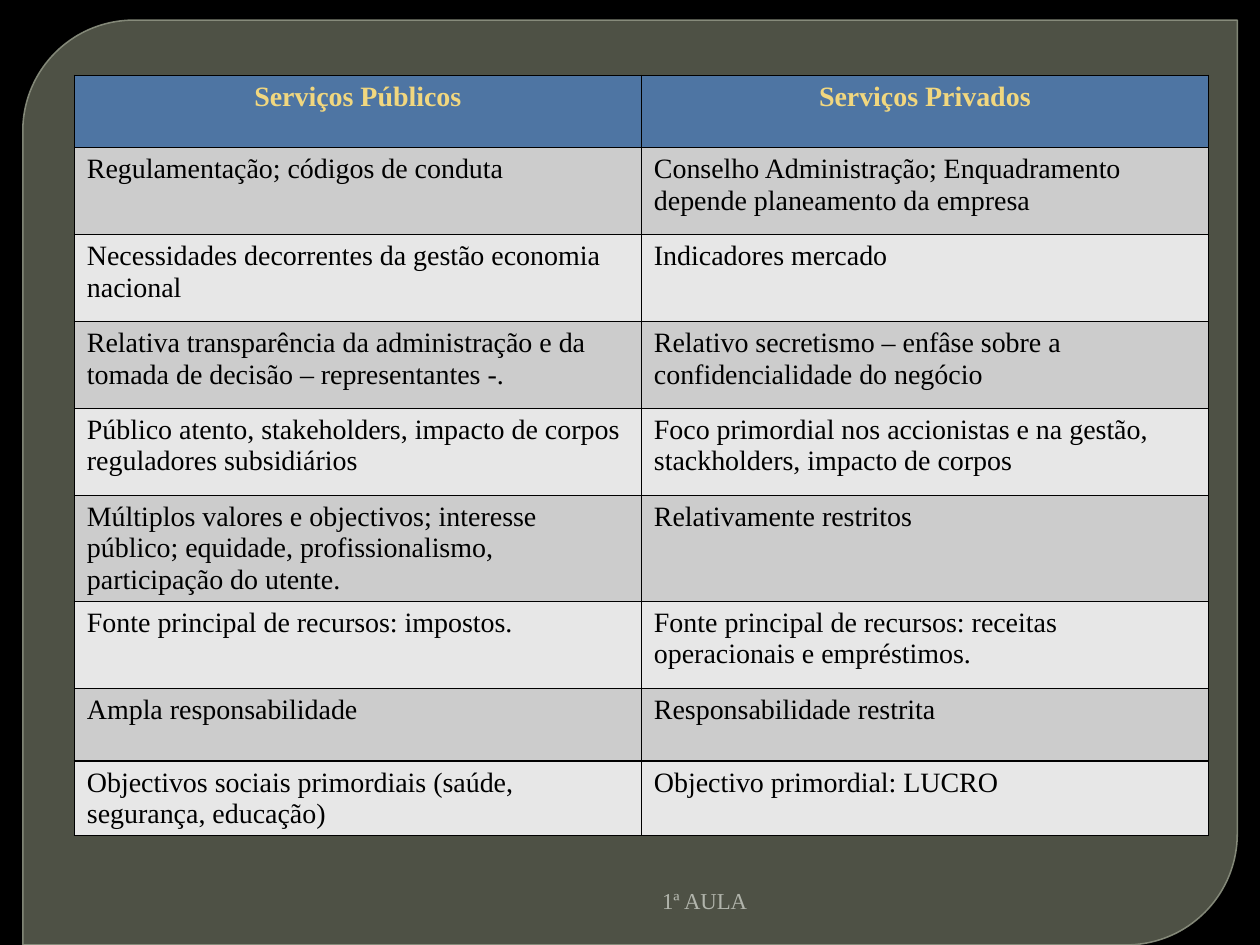
"""Build a slide comparing public and private services in a table."""
import pptx
import pptx.dml.color
import pptx.enum.shapes
import pptx.enum.text
import pptx.oxml
import pptx.oxml.ns
import pptx.util
from dataclasses import dataclass

Pt = pptx.util.Pt
Align = pptx.enum.text.PP_ALIGN
Anchor = pptx.enum.text.MSO_ANCHOR

HEADINGS = ("Serviços Públicos", "Serviços Privados")
COMPARISONS = [
    ("Regulamentação; códigos de conduta",
     "Conselho Administração; Enquadramento depende planeamento da empresa"),
    ("Necessidades decorrentes da gestão economia nacional", "Indicadores mercado"),
    ("Relativa transparência da administração e da tomada de decisão – representantes -.",
     "Relativo secretismo – enfâse sobre a confidencialidade do negócio"),
    ("Público atento, stakeholders, impacto de corpos reguladores subsidiários",
     "Foco primordial nos accionistas e na gestão, stackholders, impacto de corpos"),
    ("Múltiplos valores e objectivos; interesse público; equidade, profissionalismo, "
     "participação do utente.", "Relativamente restritos"),
    ("Fonte principal de recursos: impostos.",
     "Fonte principal de recursos: receitas operacionais e empréstimos."),
    ("Ampla responsabilidade", "Responsabilidade restrita"),
    ("Objectivos sociais primordiais (saúde, segurança, educação)",
     "Objectivo primordial: LUCRO"),
]
FOOTER = "1ª AULA"
ROW_HEIGHTS = (41.4, 49.7, 49.7, 49.7, 49.7, 57.6, 49.7, 41.4, 41.4)
COLUMN_WIDTH = 324


@dataclass(frozen=True)
class Theme:
    font: str = "Times New Roman"
    table_size: float = 16
    footer_size: float = 13
    background: str = "000000"
    panel: str = "787D6B"
    panel_line: str = "8F9483"
    header: str = "4E75A3"
    heading: str = "F1D77F"
    body: str = "000000"
    bands: tuple = ("CCCCCC", "E7E7E7")
    border: str = "000000"
    footer: str = "B1B4AB"


THEME = Theme()


def paint(fill, color):
    """Give a fill one solid colour."""
    fill.solid()
    fill.fore_color.rgb = pptx.dml.color.RGBColor.from_string(color)


def set_opacity(fill_parent, percent):
    """Set the opacity of the solid colour under an XML element."""
    color = fill_parent.find(".//" + pptx.oxml.ns.qn("a:srgbClr"))
    color.append(pptx.oxml.parse_xml(
        f'<a:alpha {pptx.oxml.ns.nsdecls("a")} val="{percent * 1000}"/>'))


def write(frame, text, *, size, color, bold=False, align=Align.LEFT):
    """Write one formatted paragraph into a text frame."""
    frame.word_wrap = True
    paragraph = frame.paragraphs[0]
    paragraph.alignment = align
    run = paragraph.add_run()
    run.text = text
    run.font.name = THEME.font
    run.font.size = Pt(size)
    run.font.bold = bold
    paint(run.font.fill, color)


def add_borders(cell):
    """Outline every side of a table cell."""
    properties = cell._tc.get_or_add_tcPr()
    for position, side in enumerate(("lnL", "lnR", "lnT", "lnB")):
        properties.insert(position, pptx.oxml.parse_xml(
            f'<a:{side} {pptx.oxml.ns.nsdecls("a")} w="{Pt(1)}"><a:solidFill>'
            f'<a:srgbClr val="{THEME.border}"/></a:solidFill></a:{side}>'))


def add_panel(slide):
    """Add the translucent panel with two rounded corners."""
    panel = slide.shapes.add_shape(
        pptx.enum.shapes.MSO_SHAPE.ROUND_2_DIAG_RECTANGLE,
        Pt(13), Pt(11.5), Pt(694), Pt(528.5))
    panel.shadow.inherit = False
    panel.adjustments[0] = 0.12
    panel.adjustments[1] = 0
    paint(panel.fill, THEME.panel)
    set_opacity(panel.fill._xPr, 65)
    paint(panel.line.fill, THEME.panel_line)
    panel.line.width = Pt(0.87)
    set_opacity(panel.line._ln, 88)


def add_comparison(slide):
    """Add the table with its header and banded rows."""
    rows = [HEADINGS, *COMPARISONS]
    table = slide.shapes.add_table(
        len(rows), len(HEADINGS), Pt(42.5), Pt(43),
        Pt(COLUMN_WIDTH * len(HEADINGS)), Pt(sum(ROW_HEIGHTS))).table
    for column in table.columns:
        column.width = Pt(COLUMN_WIDTH)
    for index, (texts, height) in enumerate(zip(rows, ROW_HEIGHTS)):
        table.rows[index].height = Pt(height)
        is_header = index == 0
        fill = THEME.header if is_header else THEME.bands[(index - 1) % 2]
        for cell, text in zip(table.rows[index].cells, texts):
            paint(cell.fill, fill)
            add_borders(cell)
            write(cell.text_frame, text, size=THEME.table_size, bold=is_header,
                  color=THEME.heading if is_header else THEME.body,
                  align=Align.CENTER if is_header else Align.LEFT)


def add_footer(slide):
    """Add the lesson label at the bottom."""
    frame = slide.shapes.add_textbox(Pt(102), Pt(504), Pt(332), Pt(21.6)).text_frame
    frame.vertical_anchor = Anchor.MIDDLE
    write(frame, FOOTER, size=THEME.footer_size, color=THEME.footer, align=Align.RIGHT)


def main():
    """Build and save the presentation."""
    presentation = pptx.Presentation()
    presentation.slide_width = Pt(720)
    presentation.slide_height = Pt(540)
    slide = presentation.slides.add_slide(presentation.slide_layouts[6])
    paint(slide.background.fill, THEME.background)
    add_panel(slide)
    add_comparison(slide)
    add_footer(slide)
    presentation.save("out.pptx")


if __name__ == "__main__":
    main()
